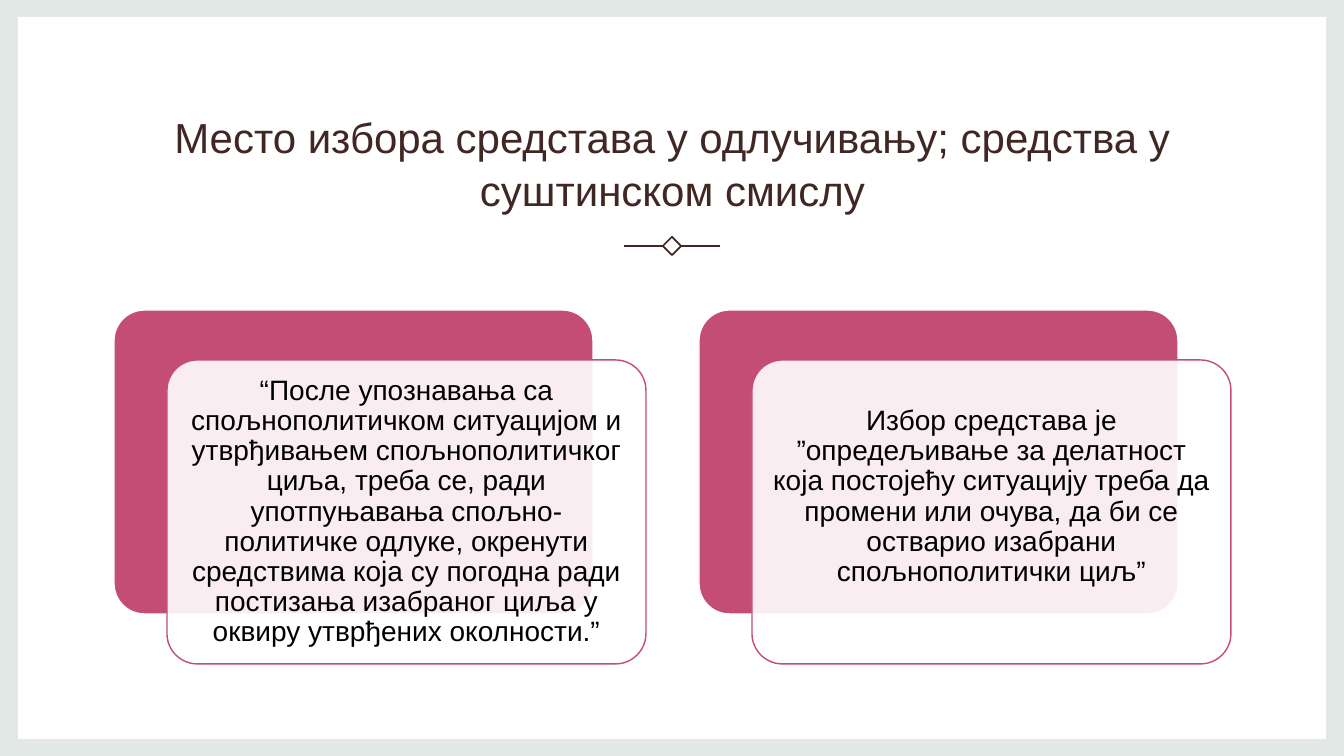
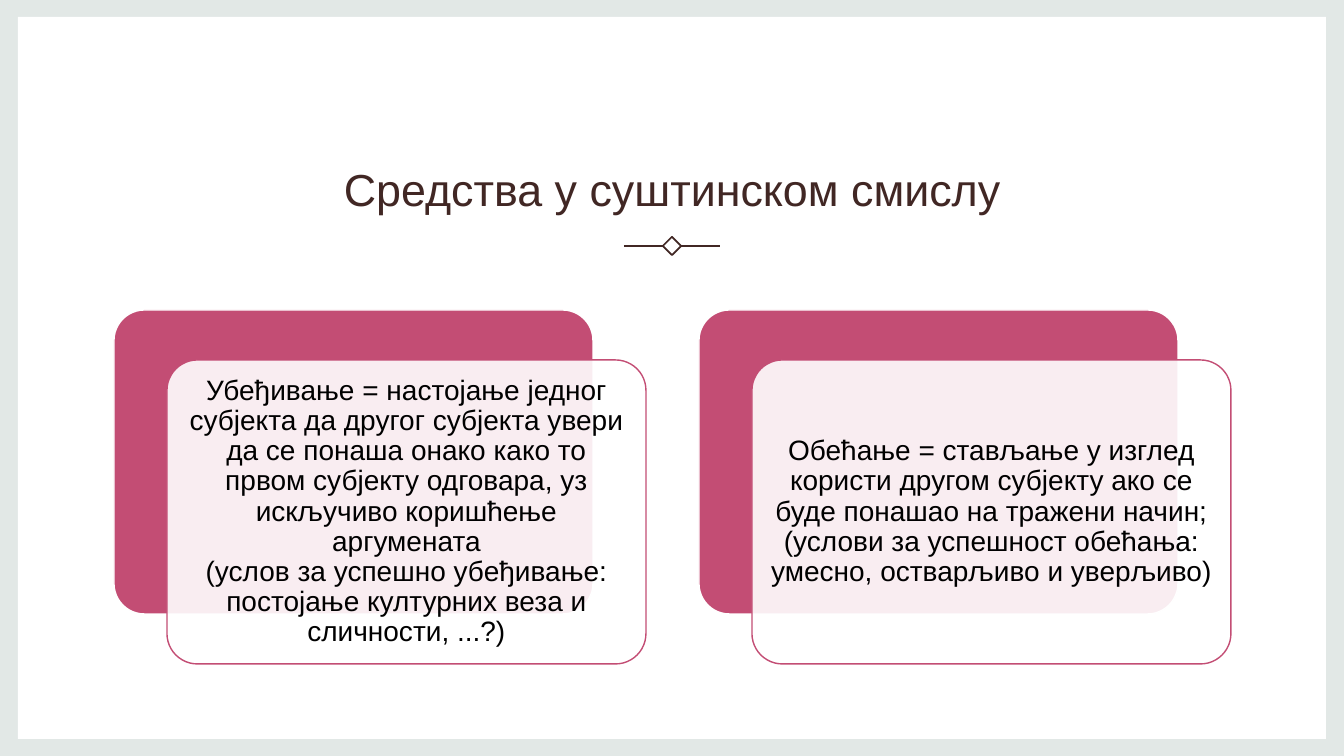
from collections import namedtuple

from lxml.etree import SubElement
from pptx import Presentation
from pptx.dml.color import RGBColor
from pptx.enum.shapes import MSO_CONNECTOR, MSO_SHAPE
from pptx.enum.text import MSO_ANCHOR, PP_ALIGN
from pptx.oxml.ns import qn
from pptx.util import Pt

COLORS = {
    "frame": "E2E8E6",
    "paper": "FFFFFF",
    "title": "412724",
    "card": "C34D74",
    "text": "000000",
}
FONT = "Arial"
EMU_PER_PX = 12192000 / 1344

Box = namedtuple("Box", "left top width height")
SLIDE = Box(0, 0, 1344, 756)
PAPER = Box(18, 17, 1308, 722)
TITLE = Box(114, 106, 1117, 114)
ORNAMENT = Box(624, 236, 96, 20)
CARDS = Box(114, 310, 1117, 354)

CARD_SIZE = (479, 304)
PANEL_SHIFT = (53, 50)
INSET = 8
LINE_HEIGHT = 30

SLIDES = [
    {
        "title": "Место избора средстава у одлучивању; средства у суштинском смислу",
        "size": 30,
        "spacing": 1.05,
        "cards": [
            ("“После упознавања са спољнополитичком ситуацијом и утврђивањем "
             "спољнополитичког циља, треба се, ради употпуњавања спољно-политичке "
             "одлуке, окренути средствима која су погодна ради постизања изабраног "
             "циља у оквиру утврђених околности.”", 0),
            ("Избор средстава је ”опредељивање за делатност која постојећу "
             "ситуацију треба да промени или очува, да би се остварио изабрани "
             "спољнополитички циљ”", LINE_HEIGHT),
        ],
    },
    {
        "title": "Средства у суштинском смислу",
        "size": 32,
        "spacing": 1.1,
        "cards": [
            ("Убеђивање = настојање једног субјекта да другог субјекта увери да се "
             "понаша онако како то првом субјекту одговара, уз искључиво коришћење "
             "аргумената\v(услов за успешно убеђивање: постојање културних веза и "
             "сличности, ...?)", 0),
            ("Обећање = стављање у изглед користи другом субјекту ако се буде "
             "понашао на тражени начин; (услови за успешност обећања: умесно, "
             "остварљиво и уверљиво)", 0),
        ],
    },
]


def px(length):
    return round(length * EMU_PER_PX)


def color(name):
    return RGBColor.from_string(COLORS[name])


def add_shape(shapes, kind, box, fill=None, line=None, line_width=1):
    shape = shapes.add_shape(kind, *map(px, box))
    shape.shadow.inherit = False
    if fill:
        shape.fill.solid()
        shape.fill.fore_color.rgb = color(fill)
    else:
        shape.fill.background()
    if line:
        shape.line.color.rgb = color(line)
        shape.line.width = Pt(line_width)
    else:
        shape.line.fill.background()
    return shape


def add_rule(shapes, left, right, y):
    rule = shapes.add_connector(
        MSO_CONNECTOR.STRAIGHT, px(left), px(y), px(right), px(y))
    rule.line.color.rgb = color("title")
    rule.line.width = Pt(1.25)
    SubElement(rule._element.spPr, qn("a:effectLst"))


def set_text(shape, text, size, text_color, anchor, spacing):
    frame = shape.text_frame
    frame.word_wrap = True
    frame.vertical_anchor = anchor
    frame.text = text
    for paragraph in frame.paragraphs:
        paragraph.alignment = PP_ALIGN.CENTER
        paragraph.line_spacing = spacing
        for run in paragraph.runs:
            run.font.name = FONT
            run.font.size = Pt(size)
            run.font.color.rgb = color(text_color)


def add_title(slide, box, text, size, spacing):
    title = slide.shapes.add_textbox(*map(px, box))
    set_text(title, text, size, "title", MSO_ANCHOR.BOTTOM, spacing)


def add_ornament(slide, box):
    shapes = slide.shapes.add_group_shape().shapes
    side, rule_length = 13, 39
    center_x = box.left + box.width / 2
    center_y = box.top + box.height / 2
    diamond = add_shape(
        shapes, MSO_SHAPE.RECTANGLE,
        Box(center_x - side / 2, center_y - side / 2, side, side),
        line="title", line_width=1.25)
    diamond.rotation = 45
    right = box.left + box.width
    add_rule(shapes, box.left, box.left + rule_length, center_y)
    add_rule(shapes, right - rule_length, right, center_y)


def add_card(shapes, left, top, text, bottom_gap):
    back = Box(left, top, *CARD_SIZE)
    front = Box(left + PANEL_SHIFT[0], top + PANEL_SHIFT[1], *CARD_SIZE)
    backing = add_shape(shapes, MSO_SHAPE.ROUNDED_RECTANGLE, back, "card", "paper")
    panel = add_shape(shapes, MSO_SHAPE.ROUNDED_RECTANGLE, front, "paper", "card")
    for shape in (backing, panel):
        shape.adjustments[0] = 0.1
    fill_color = panel._element.spPr.find(qn("a:solidFill"))[0]
    SubElement(fill_color, qn("a:alpha"), val="90000")
    frame = panel.text_frame
    frame.margin_left = frame.margin_right = frame.margin_top = px(INSET)
    frame.margin_bottom = px(INSET + bottom_gap)
    set_text(panel, text, 20, "text", MSO_ANCHOR.MIDDLE, 0.9)


def add_cards(slide, box, cards):
    shapes = slide.shapes.add_group_shape().shapes
    card_width = CARD_SIZE[0] + PANEL_SHIFT[0]
    step = (box.width - card_width) / (len(cards) - 1)
    for index, (text, bottom_gap) in enumerate(cards):
        add_card(shapes, box.left + index * step, box.top, text, bottom_gap)


def add_content_slide(presentation, content):
    slide = presentation.slides.add_slide(presentation.slide_layouts[6])
    add_shape(slide.shapes, MSO_SHAPE.RECTANGLE, PAPER, "paper")
    add_title(slide, TITLE, content["title"], content["size"], content["spacing"])
    add_ornament(slide, ORNAMENT)
    add_cards(slide, CARDS, content["cards"])


def main():
    presentation = Presentation()
    presentation.slide_width = px(SLIDE.width)
    presentation.slide_height = px(SLIDE.height)
    background = presentation.slide_master.background.fill
    background.solid()
    background.fore_color.rgb = color("frame")
    for content in SLIDES:
        add_content_slide(presentation, content)
    presentation.save("out.pptx")


if __name__ == "__main__":
    main()
